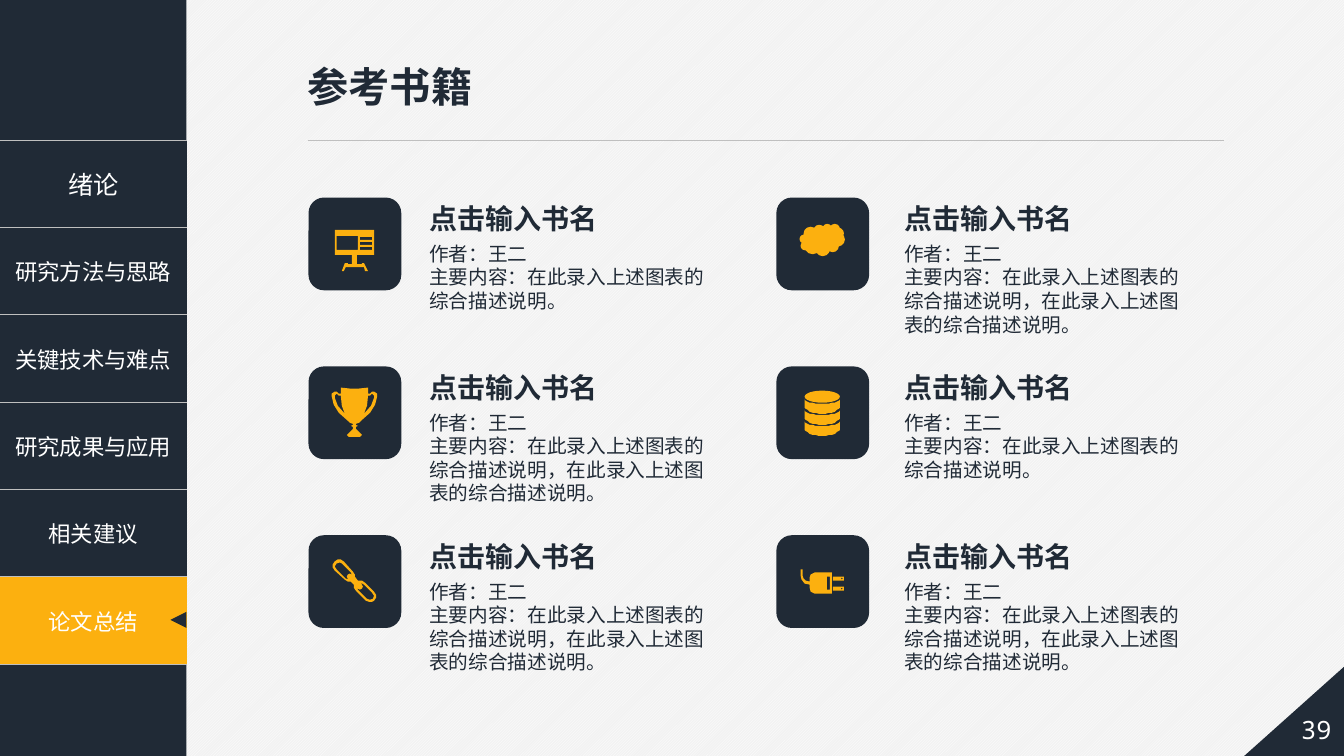
import math

import pptx
import pptx.chart.data
import pptx.dml.color
import pptx.enum.dml
import pptx.enum.shapes
import pptx.enum.text
import pptx.oxml
import pptx.util
from lxml import etree

Inches = pptx.util.Inches
Pt = pptx.util.Pt
SHAPE = pptx.enum.shapes.MSO_SHAPE
ALIGN = pptx.enum.text.PP_ALIGN
MIDDLE = pptx.enum.text.MSO_ANCHOR.MIDDLE
DRAWING = "{http://schemas.openxmlformats.org/drawingml/2006/main}"
COLORS = {name: pptx.dml.color.RGBColor.from_string(value) for name, value in {
    "navy": "202A36", "amber": "FCB00F", "rule": "BFBFBF",
    "white": "FFFFFF", "paper": "F2F2F2"}.items()}
CJK = "Noto Sans CJK SC"


def style(paragraph, size, color, bold=False, latin=CJK):
    """Set the paragraph's font, including its East Asian typeface."""
    font = paragraph.font
    font.size, font.bold, font.name = Pt(size), bold, latin
    font.color.rgb = COLORS[color]
    etree.SubElement(font._element, DRAWING + "ea", typeface=CJK)


def add_filled(shapes, kind, box, color):
    """Add a flat preset shape; box is left, top, width, height in inches."""
    shape = shapes.add_shape(kind, *map(Inches, box))
    shape.shadow.inherit = False
    shape.fill.solid()
    shape.fill.fore_color.rgb = COLORS[color]
    shape.line.fill.background()
    return shape


presentation = pptx.Presentation()
presentation.slide_width, presentation.slide_height = Inches(13.33), Inches(7.5)
slide = presentation.slides.add_slide(presentation.slide_layouts[5])
background = slide.background.fill
background.patterned()
background.pattern = pptx.enum.dml.MSO_PATTERN.LIGHT_UPWARD_DIAGONAL
background.fore_color.rgb = COLORS["white"]
background.back_color.rgb = COLORS["paper"]

# Sidebar with the chapter tabs
SIDEBAR, TAB_TOP, TAB_HEIGHT = 1.85, 1.39, 5.2 / 6
chapters = ["绪论", "研究方法与思路", "关键技术与难点", "研究成果与应用", "相关建议", "论文总结"]
add_filled(slide.shapes, SHAPE.RECTANGLE, (0, 0, SIDEBAR, 7.5), "navy")
table = slide.shapes.add_table(len(chapters), 1, 0, Inches(TAB_TOP), Inches(SIDEBAR),
                               Inches(TAB_HEIGHT * len(chapters))).table
table.first_row = table.horz_banding = False
for row, chapter in enumerate(chapters):
    cell = table.cell(row, 0)
    cell.text = chapter
    cell.vertical_anchor = MIDDLE
    paragraph = cell.text_frame.paragraphs[0]
    paragraph.alignment = ALIGN.CENTER
    style(paragraph, 18 if row == 0 else 16, "white")
    properties = cell._tc.get_or_add_tcPr()
    for side in ("lnL", "lnR", "lnT", "lnB"):
        border = etree.SubElement(properties, DRAWING + side, w=str(Pt(1)))
        if side in ("lnT", "lnB"):
            fill = etree.SubElement(border, DRAWING + "solidFill")
            etree.SubElement(fill, DRAWING + "srgbClr", val=str(COLORS["rule"]))
        else:
            etree.SubElement(border, DRAWING + "noFill")
    cell.fill.solid()
    cell.fill.fore_color.rgb = COLORS["amber" if chapter == chapters[-1] else "navy"]
pointer = add_filled(slide.shapes, SHAPE.ISOSCELES_TRIANGLE, (1.69, 6.07, 0.16, 0.16), "navy")
pointer.rotation = 270

# Title and rule
title = slide.shapes.title
title.left, title.top, title.width, title.height = map(Inches, (2.95, 0.56, 9.19, 0.59))
title.text = "参考书籍"
title.text_frame.vertical_anchor = MIDDLE
title.text_frame.paragraphs[0].alignment = ALIGN.LEFT
style(title.text_frame.paragraphs[0], 29.4, "navy", True, "Arial")
rule = slide.shapes.add_connector(pptx.enum.shapes.MSO_CONNECTOR.STRAIGHT, Inches(3.05),
                                  Inches(TAB_TOP), Inches(12.14), Inches(TAB_TOP))
rule.line.color.rgb = COLORS["rule"]
rule.line.width = Pt(0.5)
etree.SubElement(rule._element.spPr, DRAWING + "effectLst")

# Page number in the corner
corner = add_filled(slide.shapes, SHAPE.RIGHT_TRIANGLE, (12.33, 6.58, 1.04, 0.93), "navy")
corner._element.spPr.xfrm.set("flipH", "1")
number = slide.shapes.add_textbox(*map(Inches, (12.78, 6.97, 0.55, 0.53))).text_frame
number.text = "39"
number.vertical_anchor = MIDDLE
number.paragraphs[0].alignment = ALIGN.CENTER
style(number.paragraphs[0], 18, "white", latin="Noto Sans Mono")

# Icon outlines: hundredths of an inch from the tile's corner, holes after the outline
board = [
    [(65, 57), (65, 32), (26, 32), (26, 57), (43, 57), (43, 66), (39, 66), (39, 65), (36, 65),
     (33, 73), (35, 73), (37, 69), (55, 69), (56, 73), (59, 73), (55, 65), (53, 65), (53, 66),
     (48, 66), (48, 57)],
    [(28, 52), (28, 38), (49, 38), (49, 52)],
] + [[(51, y), (63, y), (63, y + 3), (51, y + 3)] for y in (39, 44, 49)]
trophy_handle = [(59, 29), (61, 29), (63, 27), (65, 29), (65, 31), (62, 39), (55, 47), (58, 39)]
trophy_half = [(45.5, 22), (50, 22), (59, 21), (59, 27), (61, 27), (63, 25), (65, 25), (68, 27),
               (68, 30), (66, 38), (61, 46), (52, 54), (50, 56), (47, 57), (47, 58), (49, 59),
               (47, 60), (47, 62), (49, 64), (51, 66), (53, 68), (51, 70)]
trophy = [trophy_half + [(91 - x, y) for x, y in reversed(trophy_half)],
          trophy_handle, [(91 - x, y) for x, y in trophy_handle]]
chain = [
    [(65, 56), (56, 47), (53, 45), (49, 45), (46, 41), (46, 39), (44, 36), (35, 26), (32, 24.5),
     (29, 24.5), (26, 26), (24.5, 29), (24.5, 32), (26, 35), (36, 44), (39, 46), (42, 46),
     (45, 49), (45, 52), (47, 55), (57, 65), (60, 66.5), (63, 66.5), (65, 65), (67, 62), (67, 59)],
    [(37, 43), (28, 34), (26.5, 31), (28, 28), (31, 27), (33, 28), (42, 37), (43, 39),
     (41, 38.5), (39, 39), (38, 41), (39, 43), (40, 44)],
    [(64, 63), (61, 64.5), (58, 63), (49, 54), (48, 52), (49, 53), (51, 54), (53, 53), (54, 51),
     (53, 49), (52, 47), (55, 49), (63, 57), (65, 60)],
]
plug = [
    [(33, 42), (33, 46), (29, 45), (27, 43), (26, 40), (26, 34), (24, 34), (24, 40), (25, 44),
     (28, 48), (33, 49), (33, 52), (34, 56), (38, 58), (55, 58), (55, 37), (38, 37), (34, 39)],
    [(50, 41), (53, 41), (53, 54), (50, 54)],
]
prongs = [[[(56, y), (67, y), (67, y + 4), (56, y + 4)],
           [(64, y + 2), (65, y + 1), (66, y + 2), (65, y + 3)]] for y in (41, 51)]
# Each disk lies between two lower halves of an ellipse
arc = [math.pi * step / 16 for step in range(17)]
disks = [[[(45.5 - 17.5 * math.cos(a), y + 5 * math.sin(a)) for a in arc]
          + [(45.5 + 17.5 * math.cos(a), y + 7 + 8 * math.sin(a)) for a in arc]]
         for y in (32, 43, 54)]

# Books in a grid of two columns and three rows
SHORT = "主要内容：在此录入上述图表的综合描述说明。"
LONG = "主要内容：在此录入上述图表的综合描述说明，在此录入上述图表的综合描述说明。"
books = [  # freeform icon parts, preset icon part with its box in the tile, summary
    ([board], None, SHORT),
    ([], (SHAPE.CLOUD, 0.23, 0.26, 0.45, 0.32), LONG),
    ([trophy], None, LONG),
    (disks, (SHAPE.OVAL, 0.28, 0.24, 0.35, 0.12), SHORT),
    ([chain], None, LONG),
    ([plug] + prongs, None, LONG),
]
for index, (outlines, preset, summary) in enumerate(books):
    row, column = divmod(index, 2)
    left, top = 3.06 + 4.64 * column, 1.96 + 1.675 * row
    group = slide.shapes.add_group_shape()
    add_filled(group.shapes, SHAPE.ROUNDED_RECTANGLE, (left, top, 0.92, 0.92), "navy")
    for contours in outlines:
        builder = group.shapes.build_freeform(*contours[0][0], scale=Inches(0.01))
        builder.add_line_segments(contours[0][1:])
        for hole in contours[1:]:
            builder.move_to(*hole[0])
            builder.add_line_segments(hole[1:])
        icon = builder.convert_to_shape(Inches(left), Inches(top))
        icon.shadow.inherit = False
        icon.fill.solid()
        icon.fill.fore_color.rgb = COLORS["amber"]
        icon.line.fill.background()
    if preset:
        kind, x, y, width, height = preset
        add_filled(group.shapes, kind, (left + x, top + y, width, height), "amber")

    text_left = 4.16 + 4.71 * column
    name = slide.shapes.add_textbox(*map(Inches, (text_left, top - 0.01, 1.88, 0.44))).text_frame
    name.text = "点击输入书名"
    style(name.paragraphs[0], 20, "navy", True)
    height = 0.81 if summary == SHORT else 1.04
    details = slide.shapes.add_textbox(*map(Inches, (text_left, top + 0.39, 2.97, height))).text_frame
    details.word_wrap = True
    details.text = "作者：王二\n" + summary
    for paragraph in details.paragraphs:
        style(paragraph, 14, "navy")

presentation.save("out.pptx")
